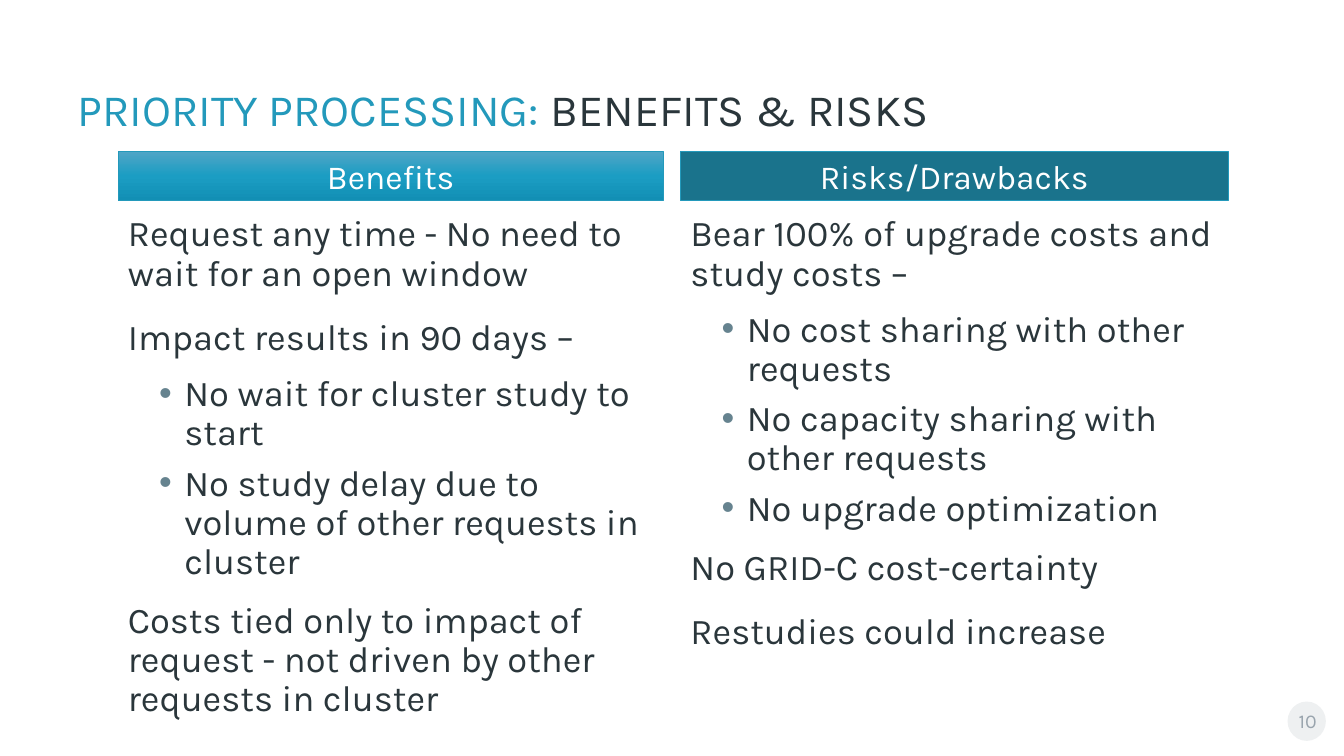
from copy import deepcopy

from lxml.etree import SubElement
from pptx import Presentation
from pptx.dml.color import RGBColor
from pptx.enum.shapes import MSO_SHAPE
from pptx.enum.text import MSO_ANCHOR, PP_ALIGN
from pptx.oxml.ns import qn
from pptx.util import Inches, Pt

TEAL, INK, WHITE = "2399BB", "2A363B", "FFFFFF"
POINT = {"line_spacing": 0.9, "space_before": Pt(12), "space_after": Pt(6)}
DETAIL = {"line_spacing": 0.9, "space_before": Pt(6), "space_after": Pt(2), "level": 1}
CENTRED = {"alignment": PP_ALIGN.CENTER}


def rgb(value):
    return RGBColor.from_string(value)


def apply(target, values):
    for name, value in values.items():
        setattr(target, name, value)


class SlideStyle:
    font = "Karla"

    def __init__(self, slide):
        self.slide = slide

    def run(self, paragraph, text, size, color):
        run = paragraph.add_run()
        run.text = text
        apply(run.font, {"name": self.font, "size": Pt(size)})
        run.font.color.rgb = rgb(color)

    def text_box(self, place, anchor=MSO_ANCHOR.TOP, **margins):
        frame = self.slide.shapes.add_textbox(*map(Inches, place)).text_frame
        apply(frame, {"word_wrap": True, "vertical_anchor": anchor, **margins})
        return frame

    def shape(self, kind, place, colors):
        shape = self.slide.shapes.add_shape(kind, *map(Inches, place))
        shape.shadow.inherit = False
        if len(colors) == 1:
            shape.fill.solid()
            shape.fill.fore_color.rgb = rgb(colors[0])
        else:
            self.gradient(shape, colors)
        return shape

    def gradient(self, shape, colors):
        shape.fill.gradient()
        shape.fill.gradient_angle = 270
        stop_list = shape._element.spPr.find(qn("a:gradFill")).find(qn("a:gsLst"))
        for _ in colors[2:]:
            stop_list.append(deepcopy(stop_list[0]))
        for index, (stop, color) in enumerate(zip(shape.fill.gradient_stops, colors)):
            stop.position = index / (len(colors) - 1)
            stop.color.rgb = rgb(color)

    def heading(self, place, text, colors):
        heading = self.shape(MSO_SHAPE.RECTANGLE, place, colors)
        heading.line.color.rgb = rgb(TEAL)
        heading.line.width = Pt(0.5)
        heading.text_frame.vertical_anchor = MSO_ANCHOR.MIDDLE
        paragraph = heading.text_frame.paragraphs[0]
        apply(paragraph, CENTRED)
        self.run(paragraph, text, 24, WHITE)

    def bullet(self, paragraph):
        properties = paragraph._p.get_or_add_pPr()
        properties.set("marL", str(Inches(0.56)))
        properties.set("indent", str(Inches(-0.25)))
        color = SubElement(properties, qn("a:buClr"))
        SubElement(color, qn("a:srgbClr"), val="66838F")
        SubElement(properties, qn("a:buFont"), typeface="Arial")
        SubElement(properties, qn("a:buChar"), char="•")

    def arguments(self, place, items):
        frame = self.text_box(place)
        for index, (values, text) in enumerate(items):
            paragraph = frame.add_paragraph() if index else frame.paragraphs[0]
            if values is DETAIL:
                self.bullet(paragraph)
            apply(paragraph, values)
            if not index:
                paragraph.space_before = Pt(0)
            self.run(paragraph, text, 25.9, INK)

    def title(self, place, parts):
        paragraph = self.text_box(place, MSO_ANCHOR.MIDDLE).paragraphs[0]
        paragraph.line_spacing = 0.75
        for text, color in parts:
            self.run(paragraph, text, 32, color)

    def page_number(self, text):
        badge = self.shape(MSO_SHAPE.OVAL, (12.77, 6.96, 0.38, 0.39), ["EEF0F1"])
        badge.line.fill.background()
        narrow = {"margin_left": Inches(0.03), "margin_right": Inches(0.03)}
        frame = self.text_box((12.77, 6.92, 0.4, 0.4), MSO_ANCHOR.BOTTOM, **narrow)
        apply(frame.paragraphs[0], CENTRED)
        self.run(frame.paragraphs[0], text, 14, "99A4AD")


COLUMNS = [
    (1.17, 5.41, "Benefits", ["50A5C6", "1B9DC3", "128FB4"], [
        (POINT, "Request any time - No need to wait for an open window"),
        (POINT, "Impact results in 90 days –"),
        (DETAIL, "No wait for cluster study to start"),
        (DETAIL, "No study delay due to volume of other requests in cluster"),
        (POINT, "Costs tied only to impact of request - not driven by other requests in cluster"),
    ]),
    (6.75, 5.43, "Risks/Drawbacks", ["1A738C"], [
        (POINT, "Bear 100% of upgrade costs and study costs –"),
        (DETAIL, "No cost sharing with other requests"),
        (DETAIL, "No capacity sharing with other requests"),
        (DETAIL, "No upgrade optimization"),
        (POINT, "No GRID-C cost-certainty"),
        (POINT, "Restudies could increase"),
    ]),
]


def main():
    deck = Presentation()
    apply(deck, {"slide_width": Inches(13.33), "slide_height": Inches(7.5)})
    style = SlideStyle(deck.slides.add_slide(deck.slide_layouts[6]))
    style.page_number("10")
    style.title((0.67, 0.62, 11.97, 1.03),
                [("PRIORITY PROCESSING: ", TEAL), ("BENEFITS & RISKS", INK)])
    for left, width, heading, colors, items in COLUMNS:
        style.arguments((left, 2.09, width, 4.79), items)
        style.heading((left, 1.5, width, 0.49), heading, colors)
    deck.save("out.pptx")


if __name__ == "__main__":
    main()
